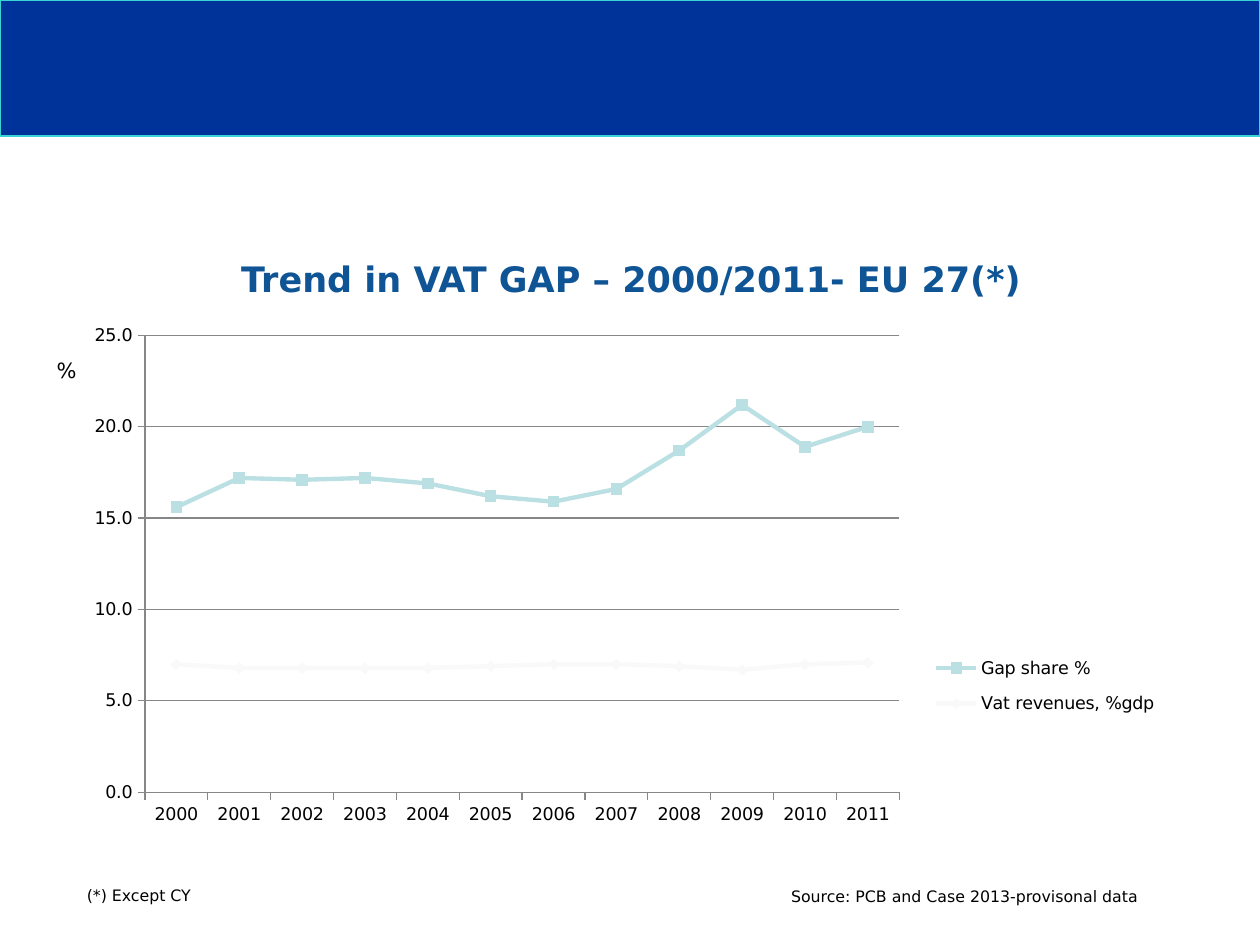
from lxml import etree
from pptx import Presentation
from pptx import util as u
from pptx.chart.data import CategoryChartData
from pptx.dml.color import RGBColor
from pptx.enum import chart as ch, shapes, text
from pptx.oxml.ns import qn

# Content
FONT = "DejaVu Sans"
COLORS = {"banner": "003399", "banner_line": "38D4D6", "title": "0F5494",
          "text": "000000", "grid": "878787"}
TITLE = "Trend in VAT GAP – 2000/2011- EU 27(*)"
YEARS = [str(year) for year in range(2000, 2012)]
SERIES = [  # name, values, colour, marker
    ("Gap share %",
     [15.6, 17.2, 17.1, 17.2, 16.9, 16.2, 15.9, 16.6, 18.7, 21.2, 18.9, 20],
     "BBE0E3", ch.XL_MARKER_STYLE.SQUARE),
    ("Vat revenues, %gdp",
     [7, 6.8, 6.8, 6.8, 6.8, 6.9, 7, 7, 6.9, 6.7, 7, 7.1],
     "F9F9F9", ch.XL_MARKER_STYLE.DIAMOND),
]
LABELS = [  # text, size, box
    ("(*) Except CY", 9, (0.59, 6.98, 3.78, 0.25)),
    ("%", 12, (0.35, 2.79, 0.31, 0.3)),
    ("Source: PCB and Case 2013-provisonal data", 9, (6.18, 6.99, 3.39, 0.25)),
]
PLOT_AREA = (0.073, 0.023, 0.672, 0.902)
LEGEND_AREA = (0.75, 0.63, 0.25, 0.17)


def rgb(name):
    return RGBColor.from_string(COLORS.get(name, name))


def inches(box):
    return [u.Inches(v) for v in box]


def style(font, size, color="text", bold=False):
    font.name, font.size, font.bold = FONT, u.Pt(size), bold
    font.color.rgb = rgb(color)


def layout(parent, area, before, inner=False):
    """Place a chart part by fractions of the chart, ahead of a given child."""
    for old in parent.findall(qn("c:layout")):
        parent.remove(old)
    node = etree.Element(qn("c:layout"))
    manual = etree.SubElement(node, qn("c:manualLayout"))
    settings = [("layoutTarget", "inner")] if inner else []
    settings += [("xMode", "edge"), ("yMode", "edge"), *zip("xywh", area)]
    for tag, value in settings:
        etree.SubElement(manual, qn("c:" + tag)).set("val", str(value))
    parent.find(qn(before)).addprevious(node)


prs = Presentation()
prs.slide_width, prs.slide_height = u.Inches(10), u.Inches(7.5)
s = prs.slides.add_slide(prs.slide_layouts[5])

# Banner
sp = s.shapes.add_shape(shapes.MSO_SHAPE.RECTANGLE, *inches((0, 0, 10, 1.08)))
sp.shadow.inherit = False
sp.fill.solid()
sp.fill.fore_color.rgb = rgb("banner")
sp.line.color.rgb = rgb("banner_line")
sp.line.width = u.Pt(0.75)

# Title
title = s.shapes.title
title.left, title.top, title.width, title.height = inches((0.51, 1.7, 9, 1.02))
tf = title.text_frame
tf.text = TITLE
tf.vertical_anchor = text.MSO_ANCHOR.MIDDLE
p = tf.paragraphs[0]
p.alignment = text.PP_ALIGN.CENTER
style(p.runs[0].font, 20, "title", True)

# Chart
data = CategoryChartData(number_format="0.0")
data.categories = YEARS
for name, values, *_ in SERIES:
    data.add_series(name, values)
chart = s.shapes.add_chart(ch.XL_CHART_TYPE.LINE_MARKERS,
                           *inches((0.5, 2.57, 8.91, 4.02)), data).chart
style(chart.font, 10)
chart.has_title = False
plot = chart.plots[0]
plot.vary_by_categories = False
for series, (_, _, color, marker) in zip(plot.series, SERIES):
    series.smooth = False
    series.format.line.color.rgb = rgb(color)
    series.format.line.width = u.Pt(2.5)
    series.marker.style, series.marker.size = marker, 6
    for part in (series.marker.format.fill, series.marker.format.line.fill):
        part.solid()
        part.fore_color.rgb = rgb(color)

# Axes
values, years = chart.value_axis, chart.category_axis
values.minimum_scale, values.maximum_scale, values.major_unit = 0, 25, 5
values.tick_labels.number_format = "0.0"
values.tick_labels.number_format_is_linked = False
values.has_major_gridlines = True
for axis in (values, years):
    axis.major_tick_mark = ch.XL_TICK_MARK.OUTSIDE
for part in (values, years, values.major_gridlines):
    part.format.line.color.rgb = rgb("grid")
    part.format.line.width = u.Pt(0.75)

# Legend and plot position
chart.has_legend = True
legend = chart.legend
legend.position = ch.XL_LEGEND_POSITION.RIGHT
legend.include_in_layout = False
style(legend.font, 10)
layout(legend._element, LEGEND_AREA, "c:overlay")
layout(plot._element.getparent(), PLOT_AREA, "c:lineChart", inner=True)

# Labels
for words, size, box in LABELS:
    tf = s.shapes.add_textbox(*inches(box)).text_frame
    tf.word_wrap = True
    tf.auto_size = text.MSO_AUTO_SIZE.SHAPE_TO_FIT_TEXT
    tf.text = words
    style(tf.paragraphs[0].runs[0].font, size)

prs.save("out.pptx")
